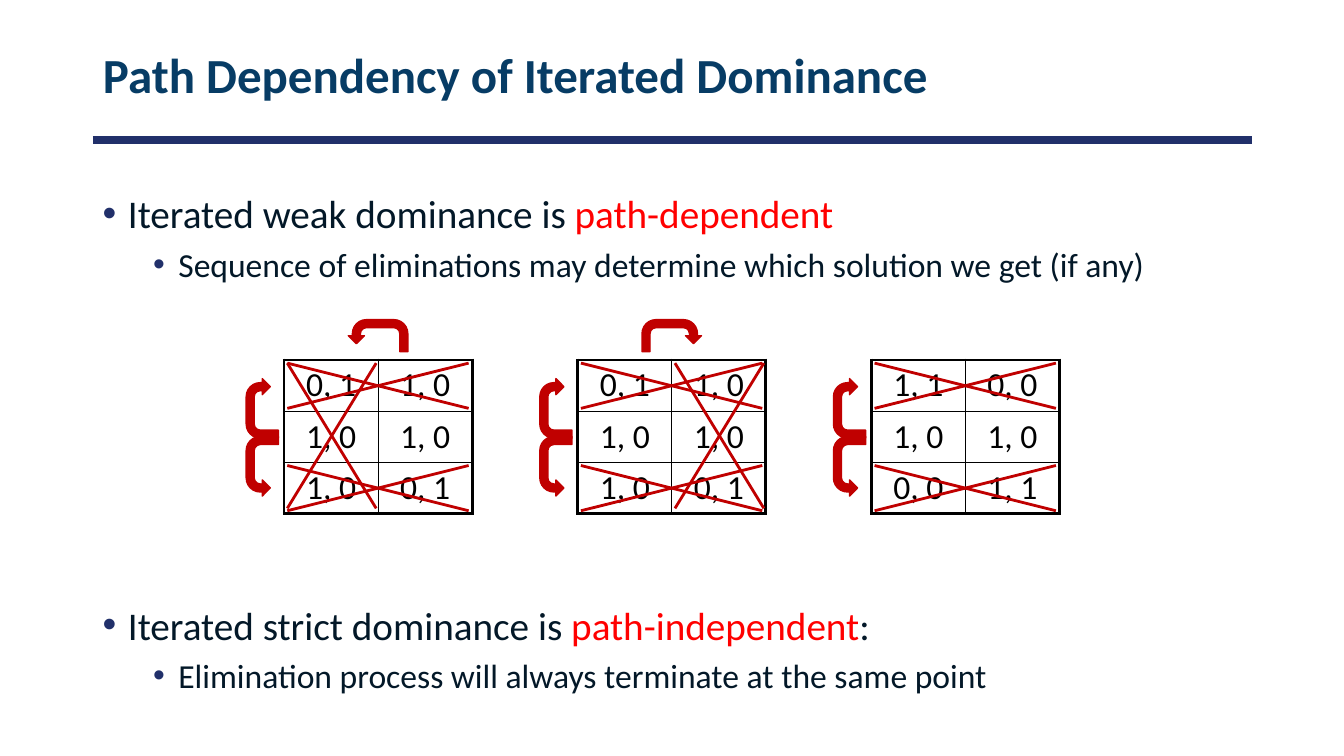
from dataclasses import dataclass
from typing import Any

from lxml.etree import SubElement
from pptx import Presentation
from pptx.dml.color import RGBColor
from pptx.enum.shapes import MSO_CONNECTOR, MSO_SHAPE
from pptx.enum.text import MSO_ANCHOR, MSO_AUTO_SIZE, PP_ALIGN
from pptx.oxml.ns import qn
from pptx.util import Cm, Pt

FONT = "Calibri"
NAVY, TITLE_BLUE, INK = "21306A", "073C65", "031828"
RED, DARK_RED, BLACK = "FF0000", "C00000", "000000"

# Geometry in centimetres
MARGIN, CONTENT_WIDTH = 2.34, 29.21
TABLE_TOP, FIRST_TABLE_LEFT, TABLE_PITCH = 9.07, 7.16, 7.4
COLUMN_WIDTH, ROW_HEIGHT = 2.37, 1.29
ARROW_WIDTH, ARROW_HEIGHT = 1.5, 0.81
CROSS_INSET = 0.08
ROW_CROSS = (4.57, 1.14)
COLUMN_CROSS = (2.24, 3.66)


@dataclass
class Bullet:
    pieces: list[tuple[str, str]]
    level: int
    size: float
    space_before: float


@dataclass
class Game:
    payoffs: list[list[str]]
    eliminated_column: int | None = None


BULLETS = [
    Bullet([("Iterated weak dominance is ", INK), ("path-dependent", RED)], 0, 28, 0),
    Bullet([("Sequence of eliminations may determine which solution we get (if any)", INK)], 1, 24, 5),
    Bullet([("Iterated strict dominance is ", INK), ("path-independent", RED), (":", INK)], 0, 28, 226.5),
    Bullet([("Elimination process will always terminate at the same point", INK)], 1, 24, 5),
]

MIXED_PAYOFFS = [["0, 1", "1, 0"], ["1, 0", "1, 0"], ["1, 0", "0, 1"]]
GAMES = [
    Game(MIXED_PAYOFFS, eliminated_column=0),
    Game(MIXED_PAYOFFS, eliminated_column=1),
    Game([["1, 1", "0, 0"], ["1, 0", "1, 0"], ["0, 0", "1, 1"]]),
]


def rgb(value: str) -> RGBColor:
    return RGBColor.from_string(value)


def apply_format(target: Any, values: dict[str, Any]) -> None:
    for name, value in values.items():
        setattr(target, name, value)


def format_font(font: Any, size: float, color: str, bold: bool = False) -> None:
    apply_format(font, {"name": FONT, "size": Pt(size), "bold": bold})
    font.color.rgb = rgb(color)


def add_line(slide: Any, start: tuple[float, float], end: tuple[float, float],
             color: str, width: float) -> None:
    points = [Cm(value) for value in (*start, *end)]
    connector = slide.shapes.add_connector(MSO_CONNECTOR.STRAIGHT, *points)
    connector.line.color.rgb = rgb(color)
    connector.line.width = Pt(width)
    SubElement(connector._element.spPr, qn("a:effectLst"))


def add_cross(slide: Any, left: float, top: float, size: tuple[float, float]) -> None:
    right, bottom = left + size[0], top + size[1]
    add_line(slide, (left, top), (right, bottom), DARK_RED, 2)
    add_line(slide, (left, bottom), (right, top), DARK_RED, 2)


def add_arrow(slide: Any, center_x: float, center_y: float,
              rotation: float = 0, flip: str | None = None) -> None:
    arrow = slide.shapes.add_shape(
        MSO_SHAPE.U_TURN_ARROW, Cm(center_x - ARROW_WIDTH / 2),
        Cm(center_y - ARROW_HEIGHT / 2), Cm(ARROW_WIDTH), Cm(ARROW_HEIGHT))
    arrow.rotation = rotation
    arrow.shadow.inherit = False
    arrow.fill.solid()
    arrow.fill.fore_color.rgb = rgb(DARK_RED)
    arrow.line.color.rgb = rgb(DARK_RED)
    arrow.line.width = Pt(1)
    if flip:
        arrow._element.spPr.xfrm.set(flip, "1")


def set_borders(cell: Any, widths: dict[str, float]) -> None:
    properties = cell._tc.get_or_add_tcPr()
    for position, (tag, width) in enumerate(widths.items()):
        border = properties.makeelement(qn(f"a:{tag}"), {"w": str(Pt(width))})
        fill = SubElement(border, qn("a:solidFill"))
        SubElement(fill, qn("a:srgbClr"), val=BLACK)
        properties.insert(position, border)


def add_payoff_table(slide: Any, payoffs: list[list[str]], left: float) -> None:
    row_count, column_count = len(payoffs), len(payoffs[0])
    table = slide.shapes.add_table(
        row_count, column_count, Cm(left), Cm(TABLE_TOP),
        Cm(COLUMN_WIDTH * column_count), Cm(ROW_HEIGHT * row_count)).table
    apply_format(table, {"first_row": False, "horz_banding": False})
    for column in table.columns:
        column.width = Cm(COLUMN_WIDTH)
    for row_index, row in enumerate(payoffs):
        table.rows[row_index].height = Cm(ROW_HEIGHT)
        for column_index, payoff in enumerate(row):
            cell = table.cell(row_index, column_index)
            cell.fill.background()
            paragraph = cell.text_frame.paragraphs[0]
            paragraph.alignment = PP_ALIGN.CENTER
            run = paragraph.add_run()
            run.text = payoff
            format_font(run.font, 24, BLACK)
            outer_edges = {
                "lnL": column_index == 0,
                "lnR": column_index == column_count - 1,
                "lnT": row_index == 0,
                "lnB": row_index == row_count - 1,
            }
            set_borders(cell, {tag: 2.25 if outer else 1 for tag, outer in outer_edges.items()})


def add_game(slide: Any, game: Game, left: float) -> None:
    add_payoff_table(slide, game.payoffs, left)

    # The middle row dominates the top and bottom rows
    add_arrow(slide, left - 0.55, TABLE_TOP + 1.22, rotation=270)
    add_arrow(slide, left - 0.55, TABLE_TOP + 2.68, rotation=90, flip="flipV")
    for row_index in (0, 2):
        add_cross(slide, left + CROSS_INSET,
                  TABLE_TOP + CROSS_INSET + row_index * ROW_HEIGHT, ROW_CROSS)

    # One column dominates the other
    if game.eliminated_column is not None:
        flip = "flipH" if game.eliminated_column == 0 else None
        add_arrow(slide, left + COLUMN_WIDTH, TABLE_TOP - 0.61, flip=flip)
        add_cross(slide, left + CROSS_INSET + game.eliminated_column * COLUMN_WIDTH,
                  TABLE_TOP + CROSS_INSET, COLUMN_CROSS)


def add_title(slide: Any, text: str) -> None:
    title = slide.shapes.title
    apply_format(title, {"left": Cm(MARGIN), "top": Cm(0.58),
                         "width": Cm(CONTENT_WIDTH), "height": Cm(2.74)})
    title.text_frame.text = text
    apply_format(title.text_frame, {"vertical_anchor": MSO_ANCHOR.MIDDLE,
                                    "auto_size": MSO_AUTO_SIZE.NONE, "word_wrap": True})
    paragraph = title.text_frame.paragraphs[0]
    apply_format(paragraph, {"alignment": PP_ALIGN.LEFT, "line_spacing": 0.9})
    format_font(paragraph.runs[0].font, 35, TITLE_BLUE, bold=True)


def add_bullets(slide: Any, bullets: list[Bullet]) -> None:
    box = slide.shapes.add_textbox(Cm(MARGIN), Cm(4.65), Cm(CONTENT_WIDTH), Cm(13.79))
    frame = box.text_frame
    frame.word_wrap = True
    for index, bullet in enumerate(bullets):
        paragraph = frame.add_paragraph() if index else frame.paragraphs[0]
        apply_format(paragraph, {"level": bullet.level, "space_before": Pt(bullet.space_before)})
        properties = paragraph._p.get_or_add_pPr()
        properties.set("marL", str(Pt(18 + 36 * bullet.level)))
        properties.set("indent", str(-Pt(18)))
        bullet_color = SubElement(properties, qn("a:buClr"))
        SubElement(bullet_color, qn("a:srgbClr"), val=NAVY)
        SubElement(properties, qn("a:buFont"), typeface="Arial")
        SubElement(properties, qn("a:buChar"), char="•")
        for text, color in bullet.pieces:
            run = paragraph.add_run()
            run.text = text
            format_font(run.font, bullet.size, color)


def main() -> None:
    presentation = Presentation()
    apply_format(presentation, {"slide_width": Cm(33.87), "slide_height": Cm(19.05)})
    slide = presentation.slides.add_slide(presentation.slide_layouts[5])

    # Heading and text
    add_line(slide, (MARGIN, 3.53), (MARGIN + CONTENT_WIDTH, 3.53), NAVY, 6)
    add_title(slide, "Path Dependency of Iterated Dominance")
    add_bullets(slide, BULLETS)

    # Three elimination examples
    for index, game in enumerate(GAMES):
        add_game(slide, game, FIRST_TABLE_LEFT + index * TABLE_PITCH)

    presentation.save("out.pptx")


if __name__ == "__main__":
    main()
